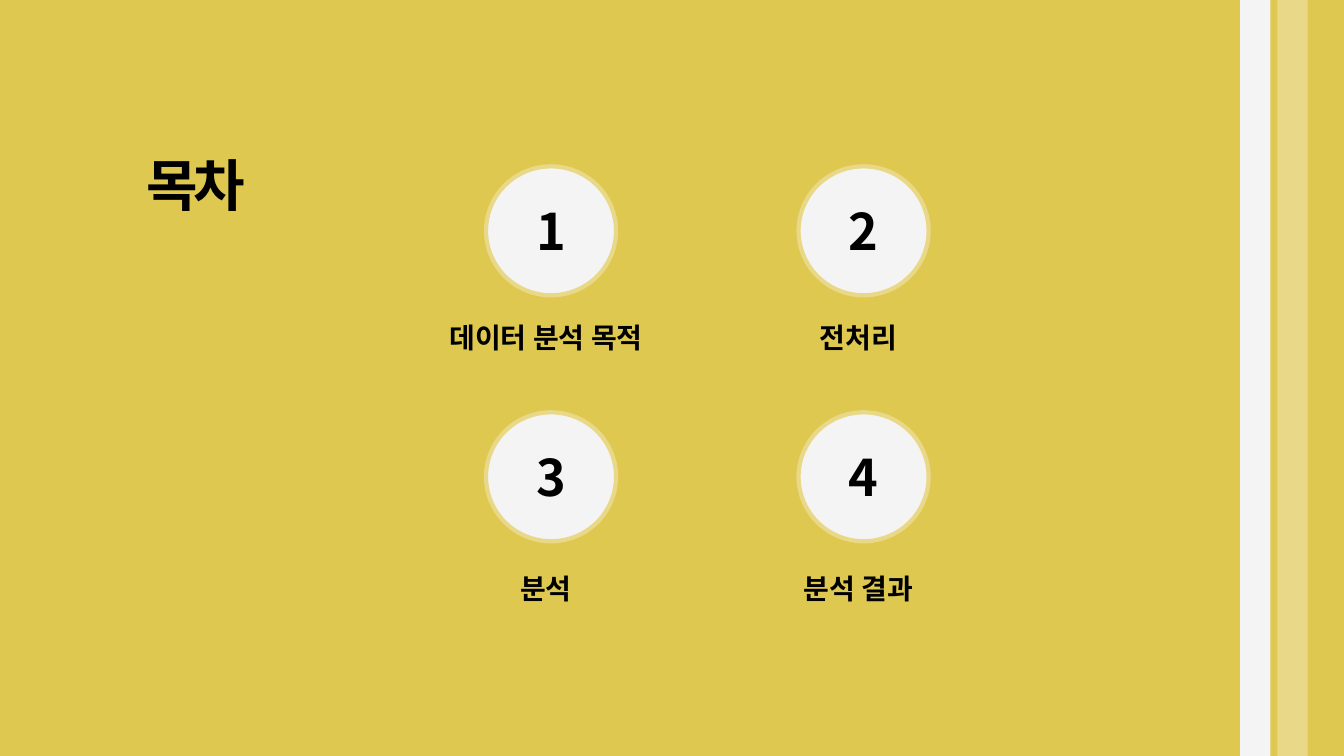
import pptx
import pptx.dml.color
import pptx.enum.shapes
import pptx.enum.text
import pptx.oxml.ns
import pptx.util
from lxml import etree
from pptx.util import Inches

FONT = "Noto Sans CJK KR"
GOLD, PALE_GOLD, OFF_WHITE, BLACK = "DEC850", "E8D888", "F4F4F4", "000000"
SECTIONS = ["데이터 분석 목적", "전처리", "분석", "분석 결과"]
COLUMNS = 2
SHAPES = pptx.enum.shapes.MSO_SHAPE
ALIGN = pptx.enum.text.PP_ALIGN
ANCHOR = pptx.enum.text.MSO_ANCHOR
AUTO_SIZE = pptx.enum.text.MSO_AUTO_SIZE


def paint(fill, color):
    fill.solid()
    fill.fore_color.rgb = pptx.dml.color.RGBColor.from_string(color)


def write(box, text, size, align=ALIGN.CENTER, anchor=ANCHOR.TOP,
          auto_size=AUTO_SIZE.SHAPE_TO_FIT_TEXT, spacing=0):
    """Put one bold line in the box; spacing is in points."""
    frame = box.text_frame
    frame.word_wrap = True
    frame.auto_size = auto_size
    frame.vertical_anchor = anchor
    para = frame.paragraphs[0]
    para.text = text
    para.alignment = align
    font = para.font
    font.size = pptx.util.Pt(size)
    font.bold = True
    font.name = FONT
    paint(font.fill, BLACK)
    properties = para._p.pPr.find(pptx.oxml.ns.qn("a:defRPr"))
    east_asian = etree.SubElement(properties, pptx.oxml.ns.qn("a:ea"))
    east_asian.set("typeface", FONT)
    if spacing:
        properties.set("spc", str(spacing * 100))


def add_plain_shape(slide, kind, left, top, width, height, color):
    shape = slide.shapes.add_shape(
        kind, Inches(left), Inches(top), Inches(width), Inches(height))
    shape.shadow.inherit = False
    paint(shape.fill, color)
    shape.line.fill.background()
    return shape


def add_title(slide, left, top, width, height):
    title = slide.shapes.title
    title.left, title.top = Inches(left), Inches(top)
    title.width, title.height = Inches(width), Inches(height)
    write(title, "목차", 40, align=ALIGN.LEFT, spacing=-3)


def add_section(slide, left, top, width, label_offset, number, name):
    """Place a numbered circle centred above its label."""
    diameter = 1.29
    circle = add_plain_shape(slide, SHAPES.OVAL, left + 0.68, top,
                             diameter, 1.28, OFF_WHITE)
    paint(circle.line.fill, PALE_GOLD)
    circle.line.width = pptx.util.Pt(3)
    write(circle, str(number), 36, anchor=ANCHOR.MIDDLE, auto_size=AUTO_SIZE.NONE)
    label = slide.shapes.add_textbox(
        Inches(left), Inches(top + label_offset), Inches(width), Inches(0.44))
    write(label, name, 20)


def add_sections(slide, left, top, column_pitch, row_pitch):
    for index, name in enumerate(SECTIONS):
        row, column = divmod(index, COLUMNS)
        add_section(slide, left + column * column_pitch, top + row * row_pitch,
                    2.55, 1.48 + row * 0.05, index + 1, name)


def add_stripes(slide, left, top, height):
    for index, color in enumerate([OFF_WHITE, PALE_GOLD]):
        add_plain_shape(slide, SHAPES.RECTANGLE, left + index * 0.37, top,
                        0.3, height, color)


def main():
    deck = pptx.Presentation()
    deck.slide_width, deck.slide_height = Inches(13.33), Inches(7.5)
    slide = deck.slides.add_slide(deck.slide_layouts.get_by_name("Title Only"))
    paint(slide.background.fill, GOLD)
    add_title(slide, 1.35, 1.44, 2.37, 0.77)
    add_sections(slide, 4.14, 1.65, 3.1, 2.44)
    add_stripes(slide, 12.3, 0, 7.5)
    deck.save("out.pptx")


if __name__ == "__main__":
    main()
